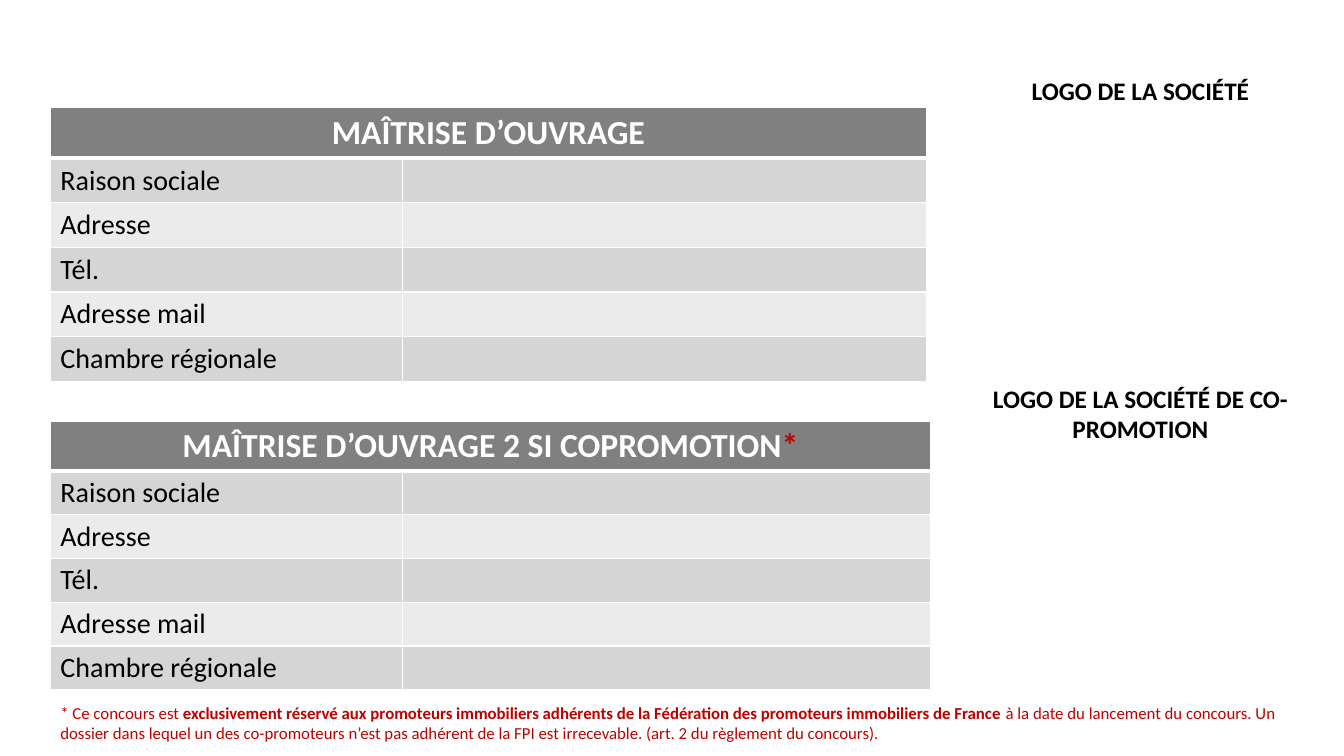
import pptx
import pptx.dml.color
import pptx.enum.text
import pptx.oxml
import pptx.oxml.ns
import pptx.util
from dataclasses import dataclass

ALIGN = pptx.enum.text.PP_ALIGN
ANCHOR = pptx.enum.text.MSO_ANCHOR


@dataclass(frozen=True)
class Theme:
    font: str = "Calibri"
    white: str = "FFFFFF"
    black: str = "000000"
    red: str = "C00000"
    header: str = "808080"
    bands: tuple = ("D5D5D5", "EBEBEB")
    header_size: int = 24
    cell_size: int = 20
    label_size: int = 18
    note_size: int = 12
    cell_margin: float = 0.04
    rule: int = 1
    header_rule: int = 3


class Sheet:
    """Places elements on one slide; lengths are percent of its width or height."""

    def __init__(self, prs, theme):
        self.prs, self.theme = prs, theme
        self.s = prs.slides.add_slide(prs.slide_layouts[6])

    def x(self, share):
        return round(self.prs.slide_width * share / 100)

    def y(self, share):
        return round(self.prs.slide_height * share / 100)

    def add_runs(self, tf, runs, size, align=ALIGN.LEFT):
        """Each run is (text, colour, bold)."""
        p = tf.paragraphs[0]
        p.alignment = align
        for text, color, bold in runs:
            r = p.add_run()
            r.text = text
            r.font.name = self.theme.font
            r.font.size = pptx.util.Pt(size)
            r.font.bold = bold
            r.font.color.rgb = pptx.dml.color.RGBColor.from_string(color)

    def add_text(self, left, top, width, height, runs, size, align=ALIGN.LEFT):
        sp = self.s.shapes.add_textbox(
            self.x(left), self.y(top), self.x(width), self.y(height))
        sp.text_frame.word_wrap = True
        self.add_runs(sp.text_frame, runs, size, align)

    def paint(self, cell, color, top, bottom):
        """Cell borders go in before the fill, as the schema orders them."""
        rule = self.theme.rule
        tcPr = cell._tc.get_or_add_tcPr()
        for side, weight in (("L", rule), ("R", rule), ("T", top), ("B", bottom)):
            tcPr.append(pptx.oxml.parse_xml(
                f'<a:ln{side} {pptx.oxml.ns.nsdecls("a")} w="{pptx.util.Pt(weight)}">'
                f'<a:solidFill><a:srgbClr val="{self.theme.white}"/></a:solidFill>'
                f'</a:ln{side}>'))
        cell.fill.solid()
        cell.fill.fore_color.rgb = pptx.dml.color.RGBColor.from_string(color)
        cell.margin_top = cell.margin_bottom = pptx.util.Inches(self.theme.cell_margin)
        cell.vertical_anchor = ANCHOR.MIDDLE

    def add_form(self, left, top, widths, header_height, row_height, title, fields):
        t = self.theme
        height = header_height + row_height * len(fields)
        table = self.s.shapes.add_table(
            len(fields) + 1, len(widths), self.x(left), self.y(top),
            self.x(sum(widths)), self.y(height)).table
        for column, width in zip(table.columns, widths):
            column.width = self.x(width)
        for i, row in enumerate(table.rows):
            row.height = self.y(row_height if i else header_height)
            for cell in row.cells:
                self.paint(cell,
                           t.bands[(i - 1) % 2] if i else t.header,
                           t.header_rule if i == 1 else t.rule,
                           t.rule if i else t.header_rule)
        table.cell(0, 0).merge(table.cell(0, len(widths) - 1))
        self.add_runs(table.cell(0, 0).text_frame, title, t.header_size, ALIGN.CENTER)
        for i, field in enumerate(fields, 1):
            self.add_runs(table.cell(i, 0).text_frame,
                          [(field, t.black, False)], t.cell_size)


def main():
    prs = pptx.Presentation()
    prs.slide_width = pptx.util.Inches(13.33)
    prs.slide_height = pptx.util.Inches(7.5)
    theme = Theme()
    sheet = Sheet(prs, theme)
    margin = 3.75
    fields = ["Raison sociale", "Adresse", "Tél.", "Adresse mail", "Chambre régionale"]

    # Project owner and co-owner forms
    sheet.add_form(margin, 14.27, (26.18, 39), 6.67, 5.9,
                   [("MAÎTRISE D’OUVRAGE", theme.white, True)], fields)
    sheet.add_form(margin, 55.73, (26.18, 39.3), 6.55, 5.8,
                   [("MAÎTRISE D’OUVRAGE 2 SI COPROMOTION", theme.white, True),
                    ("*", theme.red, True)], fields)

    # Labels for the logo areas
    for top, height, label in ((9.33, 5.33, "LOGO DE LA SOCIÉTÉ"),
                               (50, 9.47, "LOGO DE LA SOCIÉTÉ DE CO-PROMOTION")):
        sheet.add_text(72.32, top, 25.06, height, [(label, theme.black, True)],
                       theme.label_size, ALIGN.CENTER)

    # Eligibility note
    sheet.add_text(margin, 92.27, 94.3, 6.67, [
        ("* Ce concours est ", theme.red, False),
        ("exclusivement réservé aux promoteurs immobiliers adhérents de la "
         "Fédération des promoteurs immobiliers de France ", theme.red, True),
        ("à la date du lancement du concours. Un dossier dans lequel un des "
         "co-promoteurs n’est pas adhérent de la FPI est irrecevable. "
         "(art. 2 du règlement du concours).", theme.red, False),
    ], theme.note_size)

    prs.save("out.pptx")


if __name__ == "__main__":
    main()
